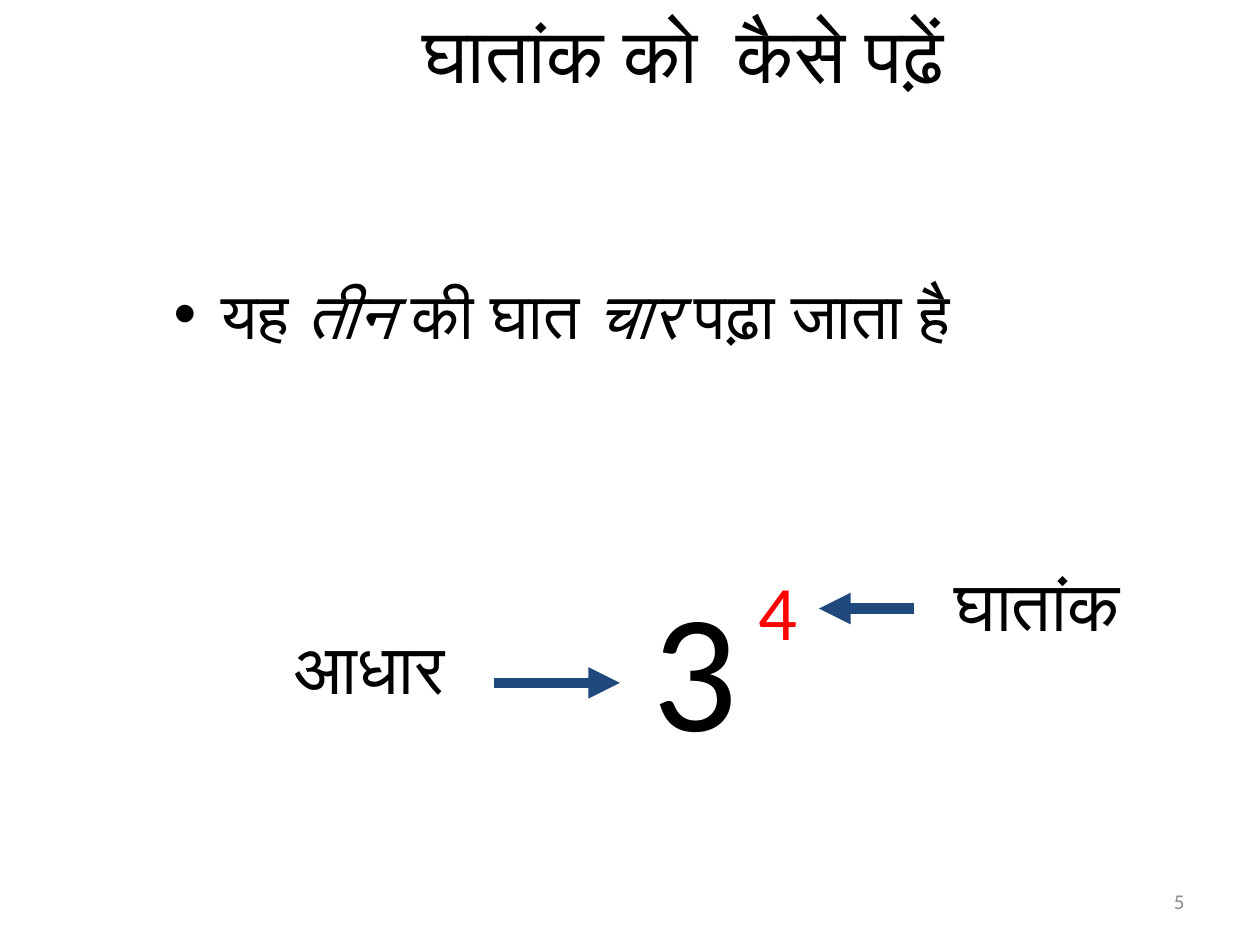
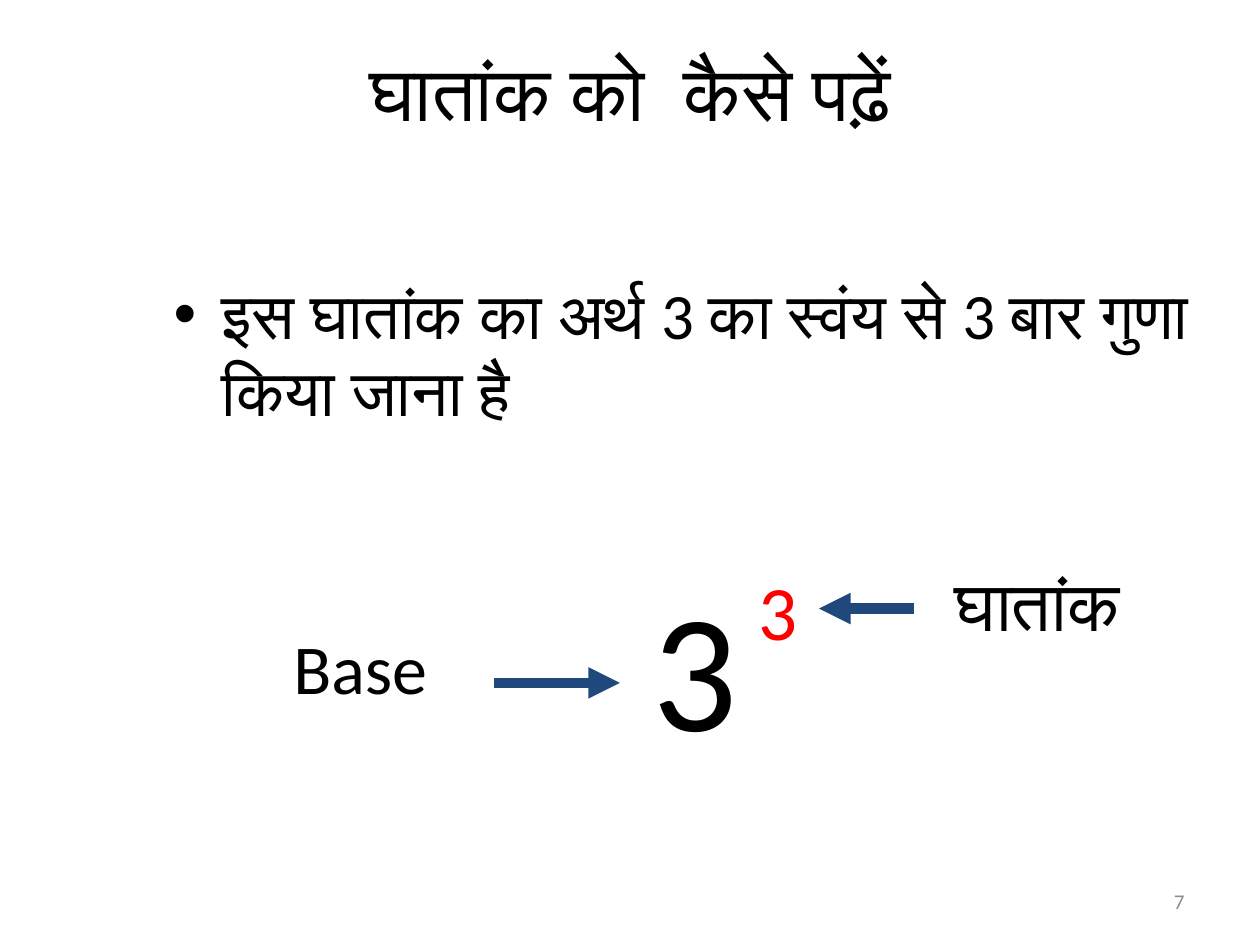
from lxml.etree import SubElement
from pptx import Presentation
from pptx.dml.color import RGBColor
from pptx.enum.shapes import MSO_CONNECTOR
from pptx.enum.text import MSO_ANCHOR, MSO_AUTO_SIZE, PP_ALIGN
from pptx.oxml.ns import qn
from pptx.util import Inches, Pt

TITLE = "घातांक को  कैसे पढ़ें"
EXPONENT_LABEL = "घातांक"
# A statement is a list of (text, italic) runs.
PAGES = [
    {
        "title_at": (1.17, 0, 8.5, 1.25),
        "statement": [("यह ", False), ("तीन ", True), ("की घात ", False),
                      ("चार", True), (" पढ़ा जाता है", False)],
        "base": "3", "exponent": "4", "base_label": "आधार", "number": "5",
    },
    {
        "title_at": (0.5, 0.3, 9, 1.25),
        "statement": [("इस घातांक का अर्थ 3 का स्वंय से 3 बार गुणा किया जाना है", False)],
        "base": "3", "exponent": "3", "base_label": "Base", "number": "7",
    },
]

FONT = "Calibri"
COLOURS = {"text": "000000", "exponent": "FF0000", "arrow": "1F497D", "number": "8C8C8C"}
SIZES = {"title": 44, "statement": 37, "base": 96, "exponent": 44, "label": 40, "number": 12}
BOXES = {
    "statement": (1.28, 2.13, 8.5, 1.29),
    "base": (5.08, 4.42, 0.87, 1.7),
    "exponent": (5.92, 4.42, 0.51, 0.83),
    "base_label": (2.23, 4.91, 1.59, 0.77),
    "exponent_label": (7.48, 4.41, 1.69, 0.77),
    "number": (7.17, 6.95, 2.33, 0.4),
}
ARROWS = [((3.92, 5.42), (4.92, 5.42)), ((7.25, 4.83), (6.5, 4.83))]
BULLET_INDENT = 0.38


def write(box, runs, size, colour="text", align=PP_ALIGN.LEFT, wrap=True,
          anchor=MSO_ANCHOR.TOP):
    frame = box.text_frame
    frame.word_wrap = wrap
    frame.auto_size = MSO_AUTO_SIZE.NONE if wrap else MSO_AUTO_SIZE.SHAPE_TO_FIT_TEXT
    frame.vertical_anchor = anchor
    para = frame.paragraphs[0]
    para.alignment = align
    for text, italic in runs:
        span = para.add_run()
        span.text = text
        span.font.name = FONT
        span.font.size = Pt(SIZES[size])
        span.font.italic = italic
        span.font.color.rgb = RGBColor.from_string(COLOURS[colour])
    return para


def add_text(page, place, runs, size, **style):
    box = page.shapes.add_textbox(*map(Inches, BOXES[place]))
    return write(box, runs, size, **style)


def add_bullet(para):
    properties = para._p.get_or_add_pPr()
    properties.set("marL", str(Inches(BULLET_INDENT)))
    properties.set("indent", str(-Inches(BULLET_INDENT)))
    SubElement(properties, qn("a:buFont"), typeface="Arial")
    SubElement(properties, qn("a:buChar"), char="•")


def add_arrow(page, start, end):
    arrow = page.shapes.add_connector(MSO_CONNECTOR.STRAIGHT, *map(Inches, start + end))
    arrow.line.color.rgb = RGBColor.from_string(COLOURS["arrow"])
    arrow.line.width = Pt(6)
    SubElement(arrow.line._get_or_add_ln(), qn("a:tailEnd"), type="triangle")
    SubElement(arrow._element.spPr, qn("a:effectLst"))


def add_page(deck, content):
    page = deck.slides.add_slide(deck.slide_layouts[5])
    title = page.shapes.title
    title.left, title.top, title.width, title.height = map(Inches, content["title_at"])
    write(title, [(TITLE, False)], "title", align=PP_ALIGN.CENTER)

    add_bullet(add_text(page, "statement", content["statement"], "statement"))

    add_text(page, "base", [(content["base"], False)], "base", wrap=False)
    add_text(page, "exponent", [(content["exponent"], False)], "exponent",
             colour="exponent", wrap=False)
    for start, end in ARROWS:
        add_arrow(page, start, end)
    add_text(page, "base_label", [(content["base_label"], False)], "label", wrap=False)
    add_text(page, "exponent_label", [(EXPONENT_LABEL, False)], "label", wrap=False)

    add_text(page, "number", [(content["number"], False)], "number", colour="number",
             align=PP_ALIGN.RIGHT, anchor=MSO_ANCHOR.MIDDLE)


def main():
    deck = Presentation()
    deck.slide_width, deck.slide_height = Inches(10), Inches(7.5)
    for content in PAGES:
        add_page(deck, content)
    deck.save("out.pptx")


if __name__ == "__main__":
    main()
